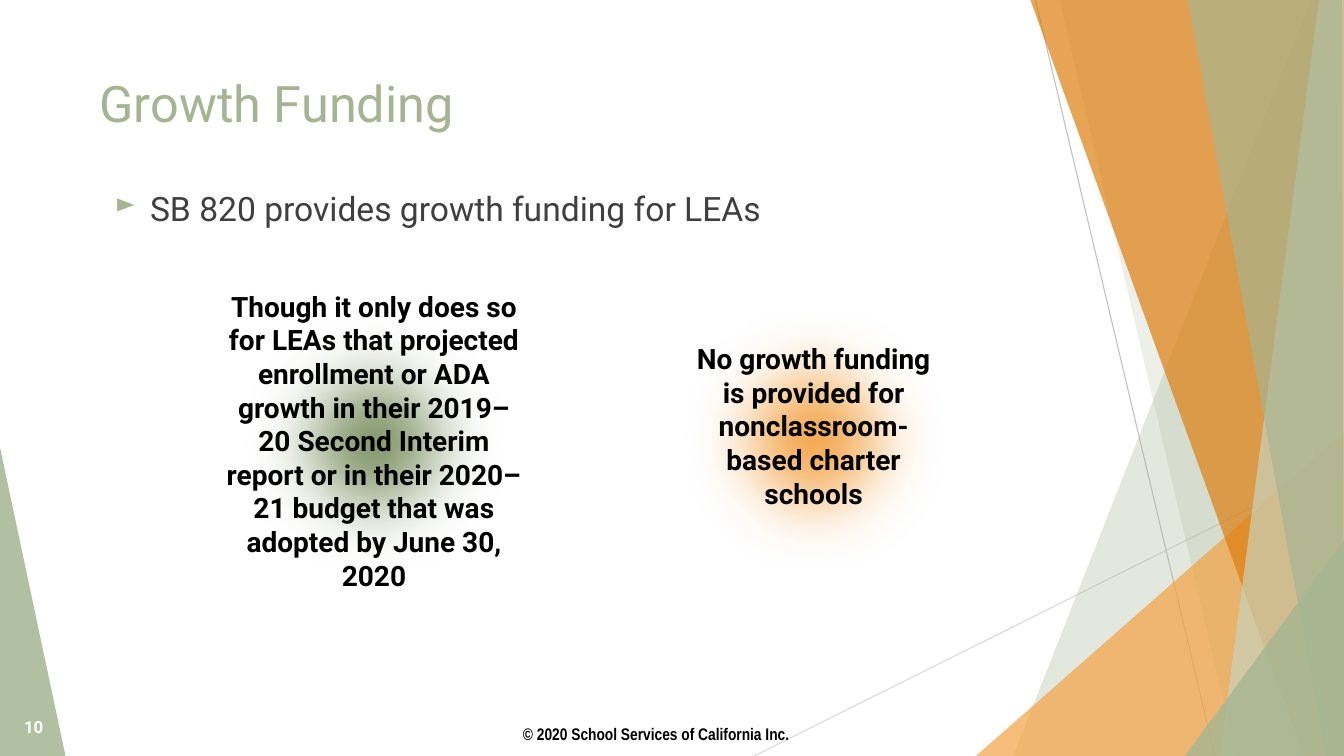
from dataclasses import dataclass
from typing import Any

from lxml.etree import SubElement
from pptx import Presentation
from pptx.dml.color import RGBColor
from pptx.enum.shapes import MSO_CONNECTOR as Connector, MSO_SHAPE as Preset
from pptx.enum.text import MSO_ANCHOR as Anchor, PP_ALIGN as Align
from pptx.oxml.ns import qn
from pptx.util import Inches, Pt

SAGE = RGBColor(0xA5, 0xB5, 0x92)
PALE_SAGE = RGBColor(0xC8, 0xD2, 0xBC)
DARK_SAGE = RGBColor(0x7D, 0x92, 0x63)
ORANGE = RGBColor(0xF3, 0xA4, 0x47)
DEEP_ORANGE = RGBColor(0xDD, 0x7E, 0x0E)
LIGHT_GRAY = RGBColor(0xD8, 0xD8, 0xD8)
GRAY = RGBColor(0xBF, 0xBF, 0xBF)
CHARCOAL = RGBColor(0x3F, 0x3F, 0x3F)
BLACK = RGBColor(0, 0, 0)
WHITE = RGBColor(0xFF, 0xFF, 0xFF)

Point = tuple[float, float]
Box = tuple[float, float, float, float]


@dataclass(frozen=True)
class Facet:
    points: tuple[Point, ...]
    color: RGBColor
    opacity: int


@dataclass(frozen=True)
class Ray:
    start: Point
    end: Point
    color: RGBColor


@dataclass(frozen=True)
class Glow:
    box: Box
    color: RGBColor


@dataclass(frozen=True)
class Label:
    box: Box
    text: str
    size: int
    color: RGBColor
    bold: bool = False
    font: str = "Roboto"
    align: Align = Align.LEFT
    anchor: Anchor = Anchor.TOP
    bullet: str = ""


LEFT_FACET = Facet(((-0.01, 4.39), (0.65, 7.5), (-0.01, 7.5)), SAGE, 85)
RAYS = (
    Ray((7.48, 7.5), (13.35, 4.57), LIGHT_GRAY),
    Ray((10.27, 0), (12.05, 7.5), GRAY),
)
RIGHT_FACETS = (
    Facet(((13, 0), (10.05, 7.5), (13.35, 7.5), (13.35, 0)), SAGE, 30),
    Facet(((10.51, 0), (12.26, 7.5), (13.35, 7.5), (13.35, 0)), SAGE, 20),
    Facet(((9.68, 7.5), (13.33, 4.29), (13.34, 7.5)), ORANGE, 72),
    Facet(((10.22, 0), (12.93, 7.5), (13.35, 7.5), (13.35, 0)), DEEP_ORANGE, 70),
    Facet(((13.08, 0), (12.1, 7.5), (13.35, 7.5), (13.34, 0)), PALE_SAGE, 70),
    Facet(((11.78, 0), (13.15, 7.5), (13.33, 7.5), (13.31, 0)), SAGE, 65),
    Facet(((11.75, 7.5), (13.34, 5.35), (13.35, 7.5)), SAGE, 80),
)
GLOWS = (
    Glow((6.54, 2.82, 3.07, 3.07), ORANGE),
    Glow((2.18, 2.86, 3.07, 3.07), DARK_SAGE),
)
LABELS = (
    Label((4.26, 7.16, 4.5, 0.24), "© 2020 School Services of California Inc.", 12, BLACK,
          True, "Arial Narrow", Align.CENTER, Anchor.MIDDLE),
    Label((0.89, 0.67, 9.26, 0.82), "Growth Funding", 36, SAGE),
    Label((0.89, 1.82, 9.26, 4.86), "SB 820 provides growth funding for LEAs", 24, CHARCOAL,
          bullet="►"),
    Label((0.14, 7.01, 0.75, 0.4), "10", 12, WHITE, True, anchor=Anchor.MIDDLE),
    Label((6.81, 3.34, 2.52, 2.12),
          "No growth funding is provided for nonclassroom-based charter schools",
          20, BLACK, True, align=Align.CENTER),
    Label((2.13, 2.82, 3.16, 3.13),
          "Though it only does so for LEAs that projected enrollment or ADA growth in their "
          "2019–20 Second Interim report or in their 2020–21 budget that was adopted by "
          "June 30, 2020",
          20, BLACK, True, align=Align.CENTER),
)


def apply_format(target: Any, values: dict[str, Any]) -> None:
    for name, value in values.items():
        setattr(target, name, value)


def paint(shape: Any, color: RGBColor) -> None:
    shape.shadow.inherit = False
    shape.fill.solid()
    shape.fill.fore_color.rgb = color
    shape.line.fill.background()


def draw_facet(slide: Any, facet: Facet) -> None:
    corners = [(Inches(x), Inches(y)) for x, y in facet.points]
    builder = slide.shapes.build_freeform(*corners[0])
    builder.add_line_segments(corners[1:], close=True)
    shape = builder.convert_to_shape()
    paint(shape, facet.color)
    color_element = shape.element.spPr.find(qn("a:solidFill"))[0]
    SubElement(color_element, qn("a:alpha"), val=str(facet.opacity * 1000))


def draw_ray(slide: Any, ray: Ray) -> None:
    ends = [Inches(value) for value in ray.start + ray.end]
    connector = slide.shapes.add_connector(Connector.STRAIGHT, *ends)
    connector.line.color.rgb = ray.color
    connector.line.width = Pt(0.75)
    SubElement(connector.element.spPr, qn("a:effectLst"))


def draw_glow(slide: Any, glow: Glow) -> None:
    shape = slide.shapes.add_shape(Preset.OVAL, *map(Inches, glow.box))
    paint(shape, glow.color)
    effects = shape.element.spPr.find(qn("a:effectLst"))
    SubElement(effects, qn("a:softEdge"), rad=str(Inches(0.69)))


def add_bullet(paragraph: Any, symbol: str) -> None:
    properties = paragraph._p.get_or_add_pPr()
    properties.set("marL", str(Inches(0.5)))
    properties.set("indent", str(Inches(-0.35)))
    color = SubElement(properties, qn("a:buClr"))
    SubElement(color, qn("a:srgbClr"), val=str(SAGE))
    SubElement(properties, qn("a:buSzPct"), val="80000")
    SubElement(properties, qn("a:buChar"), char=symbol)


def draw_label(slide: Any, label: Label) -> None:
    frame = slide.shapes.add_textbox(*map(Inches, label.box)).text_frame
    apply_format(frame, {"word_wrap": True, "vertical_anchor": label.anchor})
    paragraph = frame.paragraphs[0]
    apply_format(paragraph, {"text": label.text, "alignment": label.align})
    if label.bullet:
        add_bullet(paragraph, label.bullet)
    font = paragraph.runs[0].font
    apply_format(font, {"name": label.font, "size": Pt(label.size), "bold": label.bold})
    font.color.rgb = label.color


def main() -> None:
    presentation = Presentation()
    apply_format(presentation, {"slide_width": Inches(13.33), "slide_height": Inches(7.5)})
    slide = presentation.slides.add_slide(presentation.slide_layouts[6])
    draw_facet(slide, LEFT_FACET)
    for ray in RAYS:
        draw_ray(slide, ray)
    for facet in RIGHT_FACETS:
        draw_facet(slide, facet)
    for glow in GLOWS:
        draw_glow(slide, glow)
    for label in LABELS:
        draw_label(slide, label)
    presentation.save("out.pptx")


if __name__ == "__main__":
    main()
